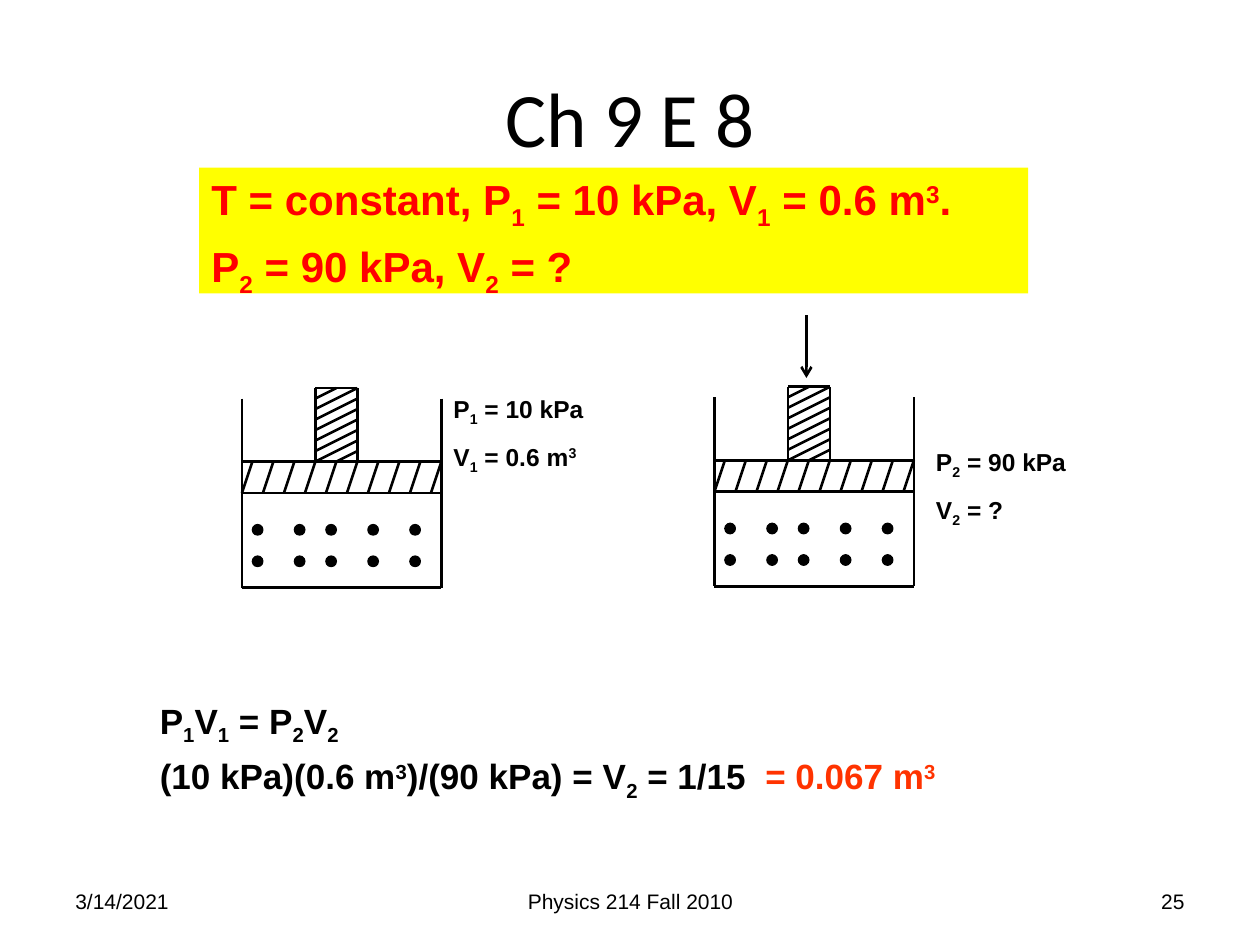
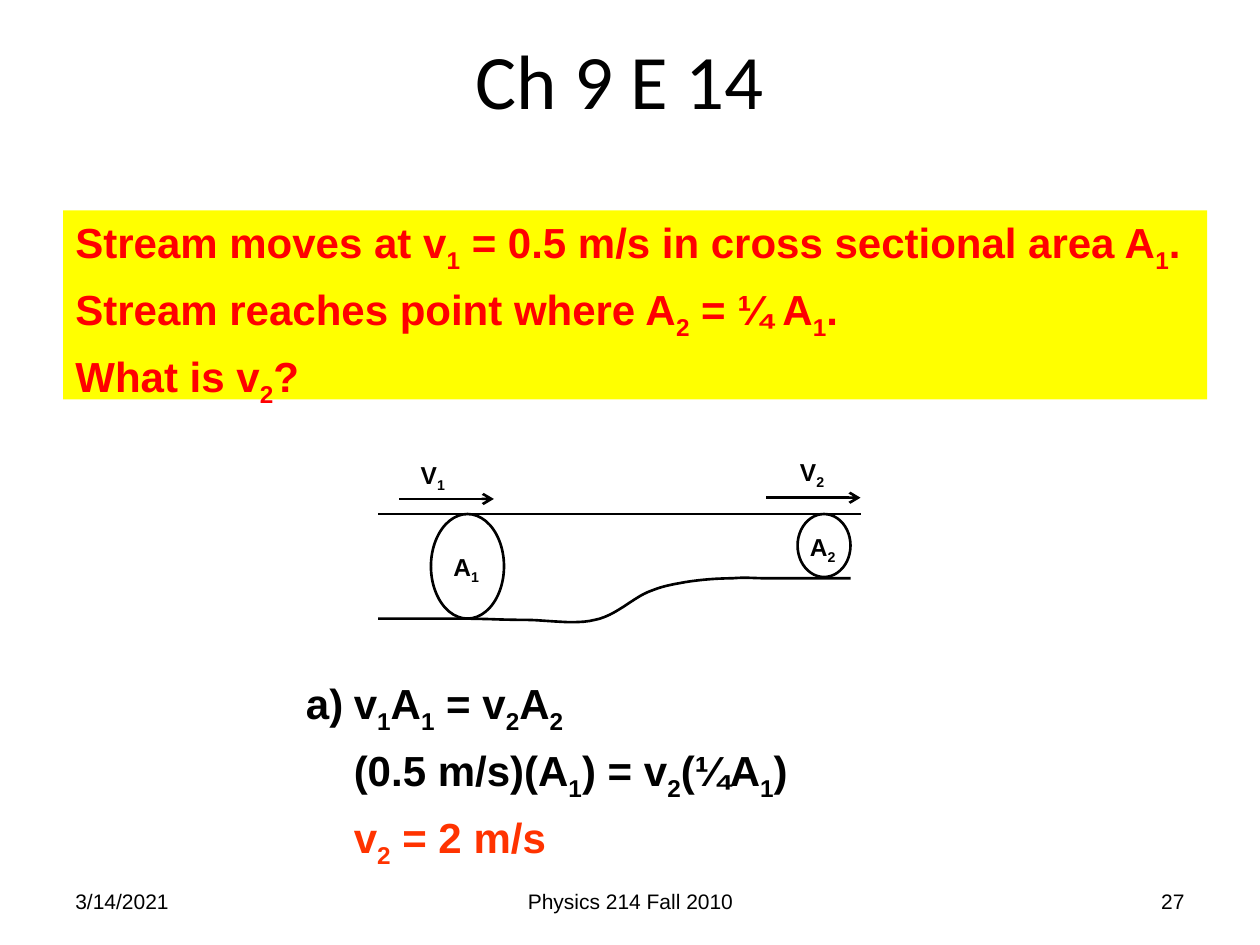
from itertools import product

from lxml.etree import SubElement
from pptx import Presentation
from pptx.dml.color import RGBColor
from pptx.enum.shapes import MSO_CONNECTOR as Conn, MSO_SHAPE as Shape
from pptx.enum.text import MSO_ANCHOR as Anchor, PP_ALIGN as Align
from pptx.oxml.ns import qn
from pptx.util import Inches, Pt

COLORS = {"ink": "000000", "band": "FFFF00", "ask": "FF0000", "answer": "FF3300"}
BASES = {"_": "-25000", "^": "30000"}
UNIT = 1 / 12  # grid step of the piston drawing


def rgb(name):
    return RGBColor.from_string(COLORS[name])


def place(shape, left, top, width, height):
    shape.left, shape.top = Inches(left), Inches(top)
    shape.width, shape.height = Inches(width), Inches(height)


# Text: "_" lowers the next letter, "^" raises it, "|" starts the answer colour
def add_run(para, text, size, color, font="Arial", bold=True, base=None):
    run = para.add_run()
    run.text = text
    run.font.name, run.font.size, run.font.bold = font, Pt(size), bold
    run.font.color.rgb = rgb(color)
    if base:
        run._r.get_or_add_rPr().set("baseline", base)


def add_math(para, text, size, color):
    plain, chars = "", iter(text)
    for char in chars:
        if char not in "_^|":
            plain += char
            continue
        if plain:
            add_run(para, plain, size, color)
            plain = ""
        if char == "|":
            color = "answer"
        else:
            add_run(para, next(chars), size, color, base=BASES[char])
    if plain:
        add_run(para, plain, size, color)


def fill_text(frame, lines, size, gap, color="ink"):
    for i, line in enumerate(lines):
        para = frame.paragraphs[0] if i == 0 else frame.add_paragraph()
        para.alignment = Align.LEFT
        para.space_before = Pt(round(size * gap * 1.15, 1) if i else 0)
        add_math(para, line, size, color)


def add_note(slide, box, lines, size=14, gap=0.5, wrap=True):
    note = slide.shapes.add_textbox(*map(Inches, box))
    note.text_frame.word_wrap = wrap
    fill_text(note.text_frame, lines, size, gap)
    return note


def number(frame, indent):
    """Letter the first paragraph and align the rest with its text."""
    for i, para in enumerate(frame.paragraphs):
        props = para._p.get_or_add_pPr()
        props.set("marL", str(Inches(indent)))
        props.set("indent", str(0 if i else -Inches(indent)))
        if i == 0:
            SubElement(props, qn("a:buFont"), typeface="+mj-lt")
            SubElement(props, qn("a:buAutoNum"), type="alphaLcParenR")


# Shared parts of a slide
def add_title(slide, text, left, top):
    title = slide.shapes.title
    place(title, left, top, 9, 1.25)
    title.text_frame.vertical_anchor = Anchor.MIDDLE
    para = title.text_frame.paragraphs[0]
    para.alignment = Align.CENTER
    add_run(para, text, 44, "ink", "Calibri", False)


def add_footer(slide, page):
    parts = [
        ("3/14/2021", 0.5, 2.33, Align.LEFT),
        ("Physics 214 Fall 2010", 3.42, 3.17, Align.CENTER),
        (page, 7.17, 2.33, Align.RIGHT),
    ]
    for text, left, width, align in parts:
        box = slide.shapes.add_textbox(*map(Inches, (left, 6.95, width, 0.4)))
        frame = box.text_frame
        frame.word_wrap, frame.vertical_anchor = True, Anchor.MIDDLE
        frame.paragraphs[0].alignment = align
        add_run(frame.paragraphs[0], text, 12, "ink", bold=False)


def add_band(slide, box, lines):
    band = slide.shapes.add_shape(Shape.RECTANGLE, *map(Inches, box))
    band.shadow.inherit = False
    band.fill.solid()
    band.fill.fore_color.rgb = rgb("band")
    band.line.fill.background()
    band.text_frame.word_wrap = True
    band.text_frame.vertical_anchor = Anchor.TOP
    fill_text(band.text_frame, lines, 24, 0.2, "ask")


def new_slide(deck, title, spot, page, box, lines):
    slide = deck.slides.add_slide(deck.slide_layouts[5])
    add_title(slide, title, *spot)
    add_footer(slide, page)
    add_band(slide, box, lines)
    return slide


# Drawing
def ink_line(shape, width=1.5):
    shape.line.color.rgb = rgb("ink")
    shape.line.width = Pt(width)


def add_line(slide, x1, y1, x2, y2, arrow=False):
    line = slide.shapes.add_connector(Conn.STRAIGHT, *map(Inches, (x1, y1, x2, y2)))
    ink_line(line)
    if arrow:
        SubElement(line.line._get_or_add_ln(), qn("a:tailEnd"), type="arrow")
    SubElement(line._element.spPr, qn("a:effectLst"))


def add_oval(slide, box, solid=False):
    oval = slide.shapes.add_shape(Shape.OVAL, *map(Inches, box))
    oval.shadow.inherit = False
    if solid:
        oval.fill.solid()
        oval.fill.fore_color.rgb = rgb("ink")
    else:
        oval.fill.background()
    ink_line(oval, 0.75 if solid else 1.5)


def add_curve(slide, start, bends, steps=12):
    """Draw joined cubic bends, each given by two handles and an end."""
    spots, here = [], start
    for bend in bends:
        knots = (here, *bend)
        for t in (i / steps for i in range(1, steps + 1)):
            parts = ((1 - t) ** 3, 3 * t * (1 - t) ** 2, 3 * t * t * (1 - t), t ** 3)
            spots.append([Inches(sum(w * k[axis] for w, k in zip(parts, knots)))
                          for axis in (0, 1)])
        here = bend[-1]
    pen = slide.shapes.build_freeform(Inches(start[0]), Inches(start[1]))
    pen.add_line_segments(spots, close=False)
    curve = pen.convert_to_shape()
    curve.shadow.inherit = False
    curve.fill.background()
    ink_line(curve)


def add_piston(slide, left, top):
    walls = [(0, 1, 0, 19), (19, 1, 19, 19), (0, 19, 19, 19)]
    plate = [(0, 10, 19, 10), (0, 7, 19, 7)]
    plate += [(x + 1, 7, x, 10) for x in range(0, 20, 2)]
    stem = [(7, 7, 7, 0), (11, 7, 11, 0), (7, 0, 11, 0)]
    stem += [(11, y, 7, y + 2) for y in range(6)]
    stem += [(9, 0, 7, 1), (11, 6, 9, 7)]
    for x1, y1, x2, y2 in walls + plate + stem:
        add_line(slide, left + x1 * UNIT, top + y1 * UNIT,
                 left + x2 * UNIT, top + y2 * UNIT)
    # Gas
    for y, x in product((13, 16), (1, 5, 8, 12, 16)):
        add_oval(slide, (left + x * UNIT, top + y * UNIT, UNIT, UNIT), solid=True)


# Slides
def gas_slide(deck):
    slide = new_slide(deck, "Ch 9 E 8", (0.5, 0.3), "25", (1.58, 1.33, 6.58, 1), [
        "T = constant, P_1 = 10 kPa, V_1 = 0.6 m^3.",
        "P_2 = 90 kPa, V_2 = ?",
    ])
    add_note(slide, (1.17, 5.5, 6.36, 0.83), [
        "P_1V_1 = P_2V_2",
        "(10 kPa)(0.6 m^3)/(90 kPa) = V_2 = 1/15  |= 0.067 m^3",
    ], 20, 0.2, wrap=False)
    add_piston(slide, 1.92, 3.08)
    add_note(slide, (3.5, 3.08, 1.39, 0.68), ["P_1 = 10 kPa", "V_1 = 0.6 m^3"])
    add_piston(slide, 5.67, 3.07)
    add_note(slide, (7.33, 3.5, 1.3, 0.68), ["P_2 = 90 kPa", "V_2 = ?"])
    add_line(slide, 6.4, 2.5, 6.4, 3, arrow=True)


def stream_slide(deck):
    slide = new_slide(deck, "Ch 9 E 14", (0.42, 0), "27", (0.5, 1.67, 9.08, 1.5), [
        "Stream moves at v_1 = 0.5 m/s in cross sectional area A_1.",
        "Stream reaches point where A_2 = ¼ A_1.",
        "What is v_2?",
    ])
    steps = add_note(slide, (2.33, 5.33, 4.07, 1.46), [
        "v_1A_1 = v_2A_2",
        "(0.5 m/s)(A_1) = v_2(¼A_1)",
        "|v_2 = 2 m/s",
    ], 24, 0.2, wrap=False)
    number(steps.text_frame, 0.38)
    # Banks
    add_line(slide, 3, 4.08, 6.83, 4.08)
    add_curve(slide, (3, 4.91), [
        ((3.27, 4.91), (3.47, 4.91), (3.67, 4.91)),
        ((3.86, 4.91), (3.99, 4.92), (4.17, 4.92)),
        ((4.34, 4.92), (4.56, 4.96), (4.72, 4.92)),
        ((4.88, 4.89), (5.02, 4.75), (5.14, 4.7)),
        ((5.26, 4.65), (5.33, 4.64), (5.44, 4.62)),
        ((5.56, 4.6), (5.7, 4.59), (5.81, 4.59)),
        ((5.93, 4.58), (5.96, 4.59), (6.11, 4.59)),
        ((6.27, 4.59), (6.62, 4.59), (6.75, 4.59)),
    ])
    # Cross sections and speeds
    add_oval(slide, (3.42, 4.08, 0.58, 0.83))
    add_oval(slide, (6.33, 4.08, 0.42, 0.5))
    labels = [("V_1", 3.24, 3.6), ("V_2", 6.25, 3.58),
              ("A_1", 3.5, 4.33), ("A_2", 6.33, 4.17)]
    for text, left, top in labels:
        add_note(slide, (left, top, 0.58, 0.33), [text])
    for left, top in ((3.17, 3.96), (6.08, 3.95)):
        add_line(slide, left, top, left + 0.75, top, arrow=True)


def main():
    deck = Presentation()
    deck.slide_width, deck.slide_height = Inches(10), Inches(7.5)
    gas_slide(deck)
    stream_slide(deck)
    deck.save("out.pptx")


if __name__ == "__main__":
    main()
